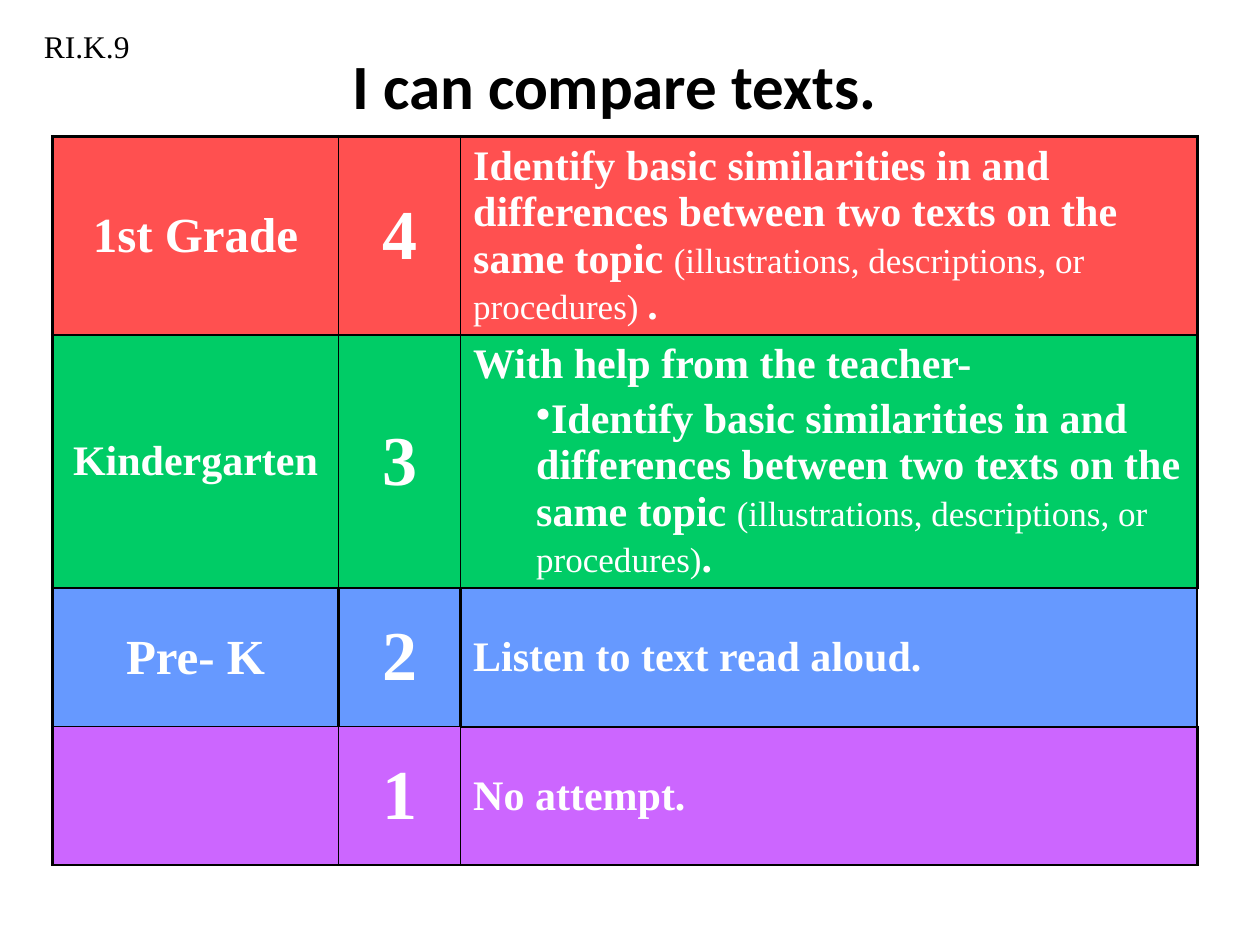
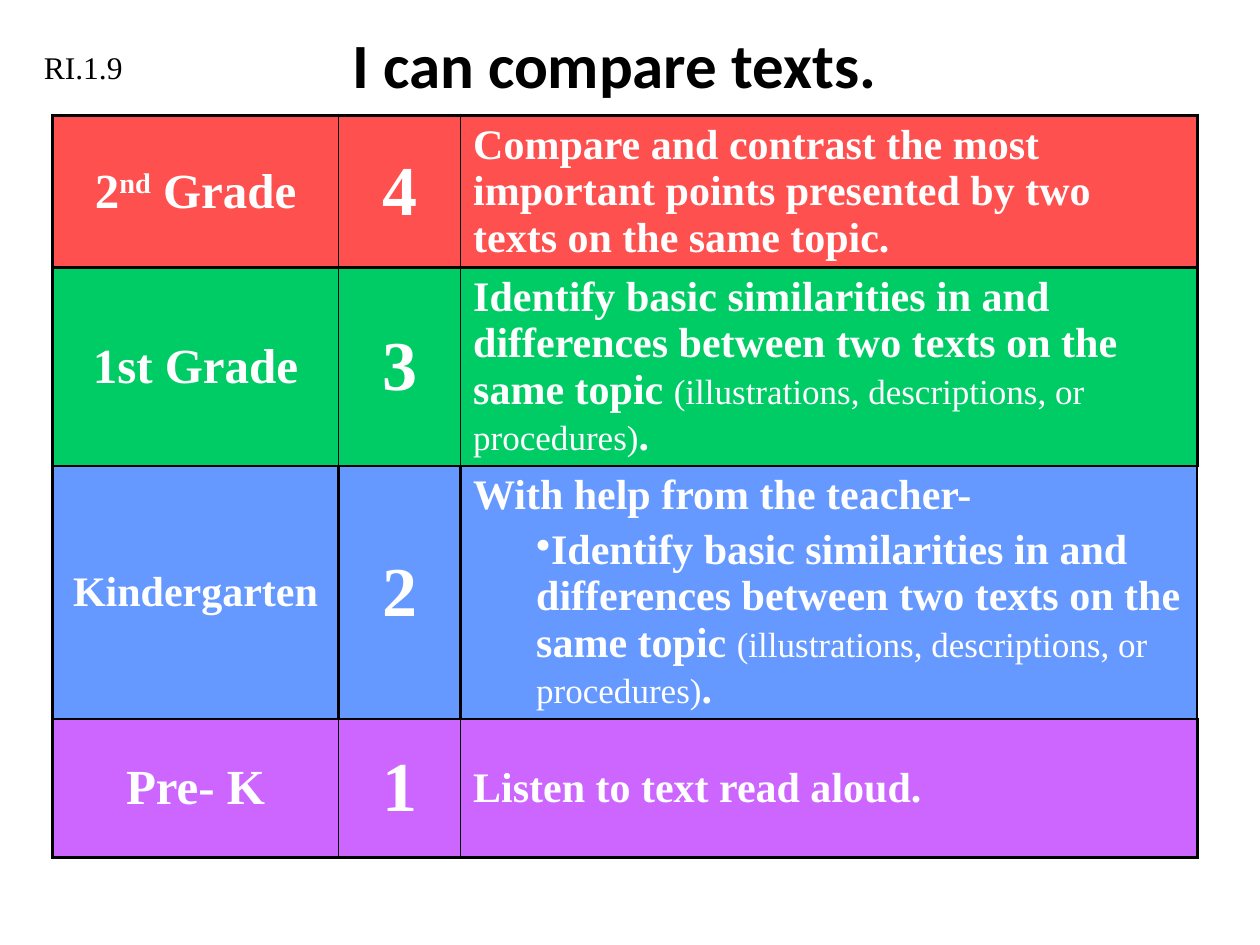
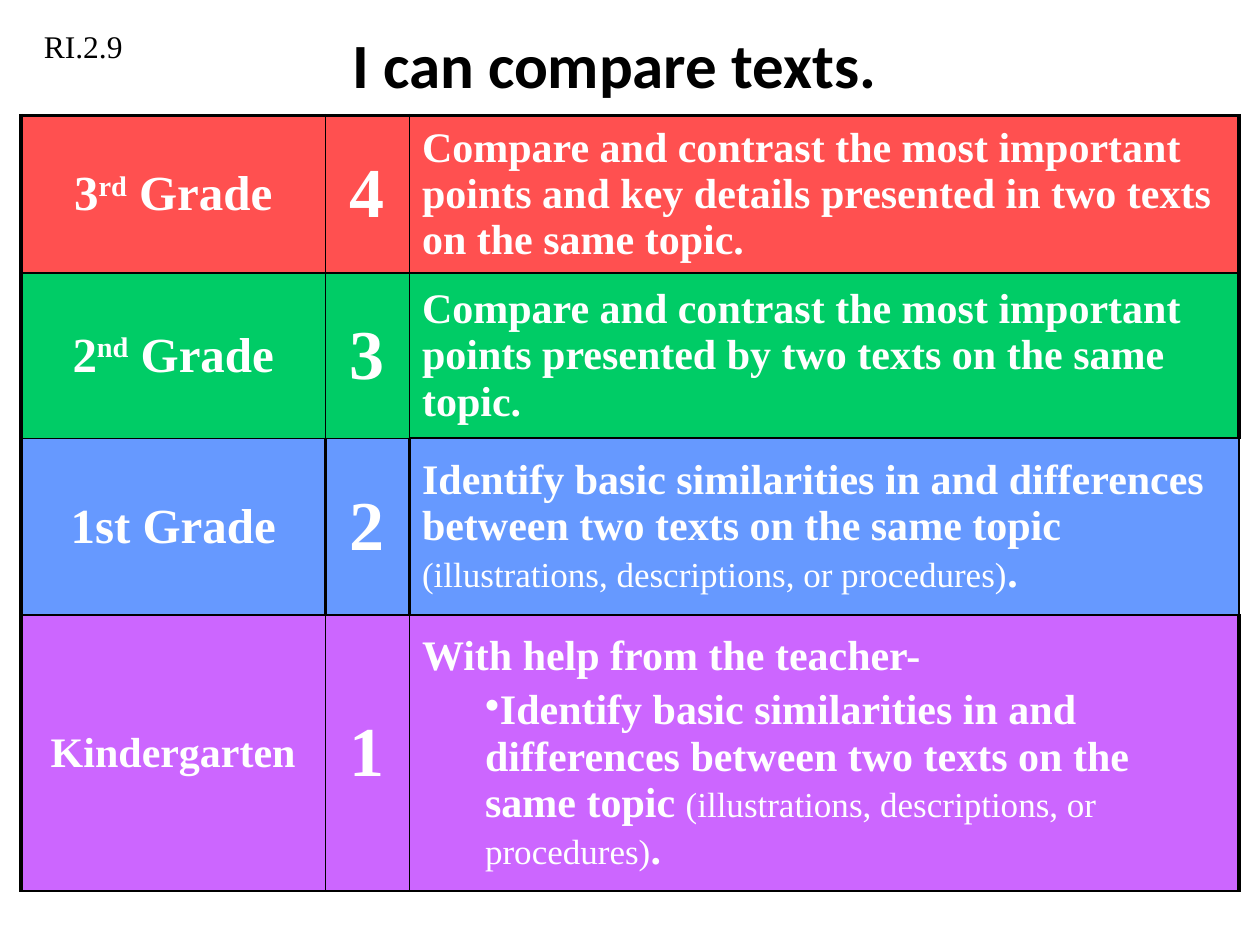
from dataclasses import dataclass

from lxml import etree
from pptx import Presentation
from pptx import util as u
from pptx.dml.color import RGBColor
from pptx.enum import text as t
from pptx.oxml import ns

Pt = u.Pt


@dataclass(frozen=True)
class Theme:
    ink: str = "000000"
    light: str = "FFFFFF"
    heading_font: str = "Calibri"
    body_font: str = "Times New Roman"
    title_size: float = 36
    score_size: float = 40
    grade_size: float = 28
    text_size: float = 24
    note_size: float = 20
    code_size: float = 18
    superscript: int = 30000


@dataclass(frozen=True)
class Band:
    fill: str
    top: float
    bottom: float
    inner: float
    right: float


@dataclass(frozen=True)
class Run:
    text: str
    size: float
    bold: bool = True
    raised: bool = False


@dataclass(frozen=True)
class Line:
    runs: list[Run]
    bulleted: bool = False


@dataclass(frozen=True)
class Level:
    grade: list[Run]
    description: list[Line]


@dataclass(frozen=True)
class Rubric:
    code: str
    code_top: float
    title_top: float
    table_left: float
    table_top: float
    table_height: float
    columns: tuple[float, ...]
    rows: tuple[float, ...]
    levels: list[Level]


THEME = Theme()
OUTER_BORDER = 2.25
MIDDLE_BORDER = 1.5
BANDS = [
    Band("FF5050", 2.25, 1.5, 1, 2.25),
    Band("00CC66", 1.5, 1, 1, 2.25),
    Band("6699FF", 1, 1, 1.5, 1.5),
    Band("CC66FF", 1, 1.5, 1, 2.25),
]


def plain(text: str) -> list[Line]:
    return [Line([Run(text, THEME.text_size)])]


def similarities(note_end: str = "") -> list[Run]:
    return [
        Run("Identify basic similarities in and differences between two texts on the same topic ", THEME.text_size),
        Run("(illustrations, descriptions, or procedures)" + note_end, THEME.note_size, bold=False),
        Run(".", THEME.text_size),
    ]


def grade(number: str, ending: str) -> list[Run]:
    size = THEME.grade_size
    return [Run(number, size), Run(ending, size, raised=True), Run(" Grade", size)]


FIRST_GRADE = [Run("1st Grade", THEME.grade_size)]
SECOND_GRADE = grade("2", "nd")
FIRST = Level(FIRST_GRADE, [Line(similarities())])
SECOND = Level(
    SECOND_GRADE,
    plain("Compare and contrast the most important points presented by two texts on the same topic."),
)
THIRD = Level(
    grade("3", "rd"),
    plain("Compare and contrast the most important points and key details presented in two texts on the same topic."),
)
KINDERGARTEN = Level(
    [Run("Kindergarten", THEME.text_size)],
    plain("With help from the teacher-") + [Line(similarities(), bulleted=True)],
)
PRE_K = Level([Run("Pre- K", THEME.grade_size)], plain("Listen to text read aloud."))
NO_ATTEMPT = Level([], plain("No attempt."))

WIDE_SCORE = (163.5, 69.75, 421)
NARROW_SCORE = (174, 48, 474)
SHORT_ROWS = (79.2, 93.6, 79.2, 79.2)

RUBRICS = [
    Rubric("RI.K.9", 12, 12, 30, 78, 438.5, WIDE_SCORE, SHORT_ROWS,
           [Level(FIRST_GRADE, [Line(similarities(" "))]), KINDERGARTEN, PRE_K, NO_ATTEMPT]),
    Rubric("RI.1.9", 24, 0, 30, 66, 452, WIDE_SCORE, SHORT_ROWS,
           [SECOND, FIRST, KINDERGARTEN, PRE_K]),
    Rubric("RI.2.9", 12, 0, 12, 66, 446.5, NARROW_SCORE, (90, 94.5, 101, 157.5),
           [THIRD, SECOND, FIRST, KINDERGARTEN]),
]


def add_text(paragraph, text: str, *, size: float, font: str = THEME.body_font,
             color: str = THEME.light, bold: bool = False, raised: bool = False) -> None:
    run = paragraph.add_run()
    run.text = text
    run.font.size = Pt(size)
    run.font.name = font
    run.font.bold = bold
    run.font.color.rgb = RGBColor.from_string(color)
    if raised:
        run.font._element.set("baseline", str(THEME.superscript))


def format_paragraph(paragraph, bulleted: bool) -> None:
    properties = paragraph._p.get_or_add_pPr()
    spacing = etree.SubElement(properties, ns.qn("a:spcBef"))
    etree.SubElement(spacing, ns.qn("a:spcPct"), val="20000")
    if bulleted:
        paragraph.level = 1
        properties.set("marL", str(Pt(36)))
        properties.set("indent", "0")
        etree.SubElement(properties, ns.qn("a:buChar"), char="•")


def set_borders(cell, left: float, right: float, top: float, bottom: float) -> None:
    properties = cell._tc.get_or_add_tcPr()
    for index, (side, width) in enumerate(zip("LRTB", (left, right, top, bottom))):
        border = etree.Element(ns.qn(f"a:ln{side}"), w=str(Pt(width)))
        fill = etree.SubElement(border, ns.qn("a:solidFill"))
        etree.SubElement(fill, ns.qn("a:srgbClr"), val=THEME.ink)
        properties.insert(index, border)


def fill_cell(cell, lines: list[Line], color: str, alignment) -> None:
    cell.fill.solid()
    cell.fill.fore_color.rgb = RGBColor.from_string(color)
    cell.vertical_anchor = t.MSO_ANCHOR.MIDDLE
    for index, line in enumerate(lines):
        paragraph = cell.text_frame.add_paragraph() if index else cell.text_frame.paragraphs[0]
        paragraph.alignment = alignment
        format_paragraph(paragraph, line.bulleted)
        for run in line.runs:
            add_text(paragraph, run.text, size=run.size, bold=run.bold, raised=run.raised)


def add_title(slide, top: float) -> None:
    title = slide.shapes.title
    title.left, title.top, title.width, title.height = Pt(12), Pt(top), Pt(678), Pt(72)
    frame = title.text_frame
    frame.auto_size = t.MSO_AUTO_SIZE.NONE
    frame.vertical_anchor = t.MSO_ANCHOR.MIDDLE
    paragraph = frame.paragraphs[0]
    paragraph.alignment = t.PP_ALIGN.CENTER
    add_text(paragraph, "I can compare texts.", size=THEME.title_size,
             font=THEME.heading_font, color=THEME.ink, bold=True)


def add_rubric_table(slide, rubric: Rubric) -> None:
    graphic = slide.shapes.add_table(
        len(rubric.rows), len(rubric.columns), Pt(rubric.table_left), Pt(rubric.table_top),
        Pt(sum(rubric.columns)), Pt(rubric.table_height))
    table = graphic.table
    table.first_row = False
    table.horz_banding = False
    for column, width in zip(table.columns, rubric.columns):
        column.width = Pt(width)
    for row, height in zip(table.rows, rubric.rows):
        row.height = Pt(height)
    graphic.height = Pt(rubric.table_height)

    center, left = t.PP_ALIGN.CENTER, t.PP_ALIGN.LEFT
    for index, (level, band) in enumerate(zip(rubric.levels, BANDS)):
        score = Run(str(len(BANDS) - index), THEME.score_size)
        grade_cell, score_cell, description_cell = table.rows[index].cells
        fill_cell(grade_cell, [Line(level.grade)], band.fill, center)
        fill_cell(score_cell, [Line([score])], band.fill, center)
        fill_cell(description_cell, level.description, band.fill, left)
        set_borders(grade_cell, OUTER_BORDER, band.inner, band.top, band.bottom)
        set_borders(score_cell, band.inner, band.inner, band.top, band.bottom)
        set_borders(description_cell, band.inner, band.right, max(band.top, MIDDLE_BORDER), MIDDLE_BORDER)


def add_code(slide, rubric: Rubric) -> None:
    box = slide.shapes.add_textbox(Pt(18), Pt(rubric.code_top), Pt(102), Pt(29))
    box.text_frame.word_wrap = True
    box.text_frame.auto_size = t.MSO_AUTO_SIZE.SHAPE_TO_FIT_TEXT
    add_text(box.text_frame.paragraphs[0], rubric.code, size=THEME.code_size, color=THEME.ink)


def main() -> None:
    presentation = Presentation()
    presentation.slide_width, presentation.slide_height = Pt(720), Pt(540)
    title_only = presentation.slide_layouts.get_by_name("Title Only")
    for rubric in RUBRICS:
        slide = presentation.slides.add_slide(title_only)
        add_title(slide, rubric.title_top)
        add_rubric_table(slide, rubric)
        add_code(slide, rubric)
    presentation.save("out.pptx")


if __name__ == "__main__":
    main()
